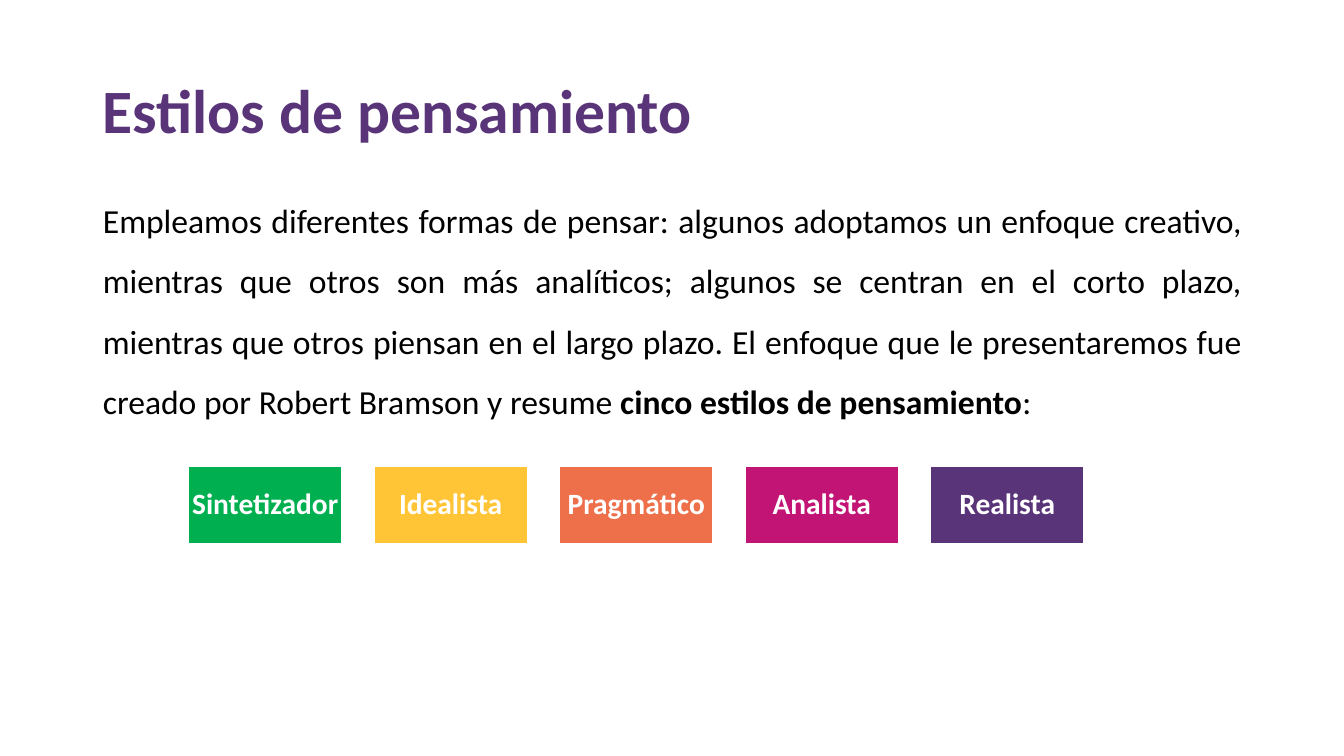
from lxml import etree
from pptx import Presentation
from pptx.dml.color import RGBColor
from pptx.enum.shapes import MSO_SHAPE
from pptx.enum.text import MSO_ANCHOR, MSO_AUTO_SIZE, PP_ALIGN
from pptx.oxml.ns import qn
from pptx.util import Inches, Pt

RECTANGLE = MSO_SHAPE.RECTANGLE
MIDDLE, TOP = MSO_ANCHOR.MIDDLE, MSO_ANCHOR.TOP
LEFT, CENTER, JUSTIFY = PP_ALIGN.LEFT, PP_ALIGN.CENTER, PP_ALIGN.JUSTIFY
NO_AUTOFIT = MSO_AUTO_SIZE.NONE

BLACK = RGBColor(0x00, 0x00, 0x00)
WHITE = RGBColor(0xFF, 0xFF, 0xFF)
GREEN = RGBColor(0x00, 0xB0, 0x50)
YELLOW = RGBColor(0xFF, 0xC5, 0x36)
ORANGE = RGBColor(0xEE, 0x70, 0x4A)
MAGENTA = RGBColor(0xC1, 0x14, 0x74)
PURPLE = RGBColor(0x59, 0x34, 0x79)

INTRODUCTION = [
    ("Empleamos diferentes formas de pensar: algunos adoptamos un enfoque "
     "creativo, mientras que otros son más analíticos; algunos se centran en "
     "el corto plazo, mientras que otros piensan en el largo plazo. El enfoque "
     "que le presentaremos fue creado por Robert Bramson y resume ", False),
    ("cinco estilos de pensamiento", True),
    (":", False),
]
THINKING_STYLES = [
    ("Sintetizador", GREEN),
    ("Idealista", YELLOW),
    ("Pragmático", ORANGE),
    ("Analista", MAGENTA),
    ("Realista", PURPLE),
]
FIRST_BOX_LEFT, BOX_TOP, BOX_PITCH = 1.87, 4.63, 1.84
BOX_WIDTH, BOX_HEIGHT = 1.52, 0.76


class SlideBuilder:
    font_name = "Calibri"

    def __init__(self, slide):
        self.slide = slide

    def place(self, shape, left, top, width, height):
        shape.left, shape.top = Inches(left), Inches(top)
        shape.width, shape.height = Inches(width), Inches(height)

    def add_text(self, shape, runs, size, color, alignment, anchor, line_spacing):
        """Fill the first paragraph with (text, bold) runs and return it."""
        frame = shape.text_frame
        frame.word_wrap = True
        frame.auto_size = NO_AUTOFIT
        frame.vertical_anchor = anchor
        paragraph = frame.paragraphs[0]
        paragraph.alignment = alignment
        paragraph.line_spacing = line_spacing
        paragraph.space_before = Pt(0)
        for text, bold in runs:
            run = paragraph.add_run()
            run.text = text
            run.font.name = self.font_name
            run.font.size = Pt(size)
            run.font.bold = bold
            run.font.color.rgb = color
        return paragraph

    def title(self, text):
        title = self.slide.shapes.title
        self.place(title, 0.92, 0.4, 11.5, 1.45)
        self.add_text(title, [(text, True)], 44, PURPLE, LEFT, MIDDLE, 0.9)

    def body(self, runs):
        body = self.slide.placeholders[1]
        self.place(body, 0.92, 1.73, 11.5, 4.76)
        paragraph = self.add_text(body, runs, 24, BLACK, JUSTIFY, TOP, 1.5)
        properties = paragraph._p.get_or_add_pPr()
        properties.set("marL", "0")
        properties.set("indent", "0")
        etree.SubElement(properties, qn("a:buNone"))

    def style_box(self, text, color, left):
        box = self.slide.shapes.add_shape(
            RECTANGLE, Inches(left), Inches(BOX_TOP),
            Inches(BOX_WIDTH), Inches(BOX_HEIGHT))
        box.shadow.inherit = False
        box.fill.solid()
        box.fill.fore_color.rgb = color
        box.line.color.rgb = WHITE
        box.line.width = Pt(1)
        frame = box.text_frame
        frame.margin_left = frame.margin_right = Inches(0.01)
        frame.margin_top = frame.margin_bottom = Inches(0.01)
        self.add_text(box, [(text, True)], 21, WHITE, CENTER, MIDDLE, 0.9)


def main():
    presentation = Presentation()
    presentation.slide_width = Inches(13.33)
    presentation.slide_height = Inches(7.5)
    title_and_content = presentation.slide_layouts[1]
    builder = SlideBuilder(presentation.slides.add_slide(title_and_content))

    builder.title("Estilos de pensamiento")
    builder.body(INTRODUCTION)
    for index, (name, color) in enumerate(THINKING_STYLES):
        builder.style_box(name, color, FIRST_BOX_LEFT + index * BOX_PITCH)

    presentation.save("out.pptx")


if __name__ == "__main__":
    main()
